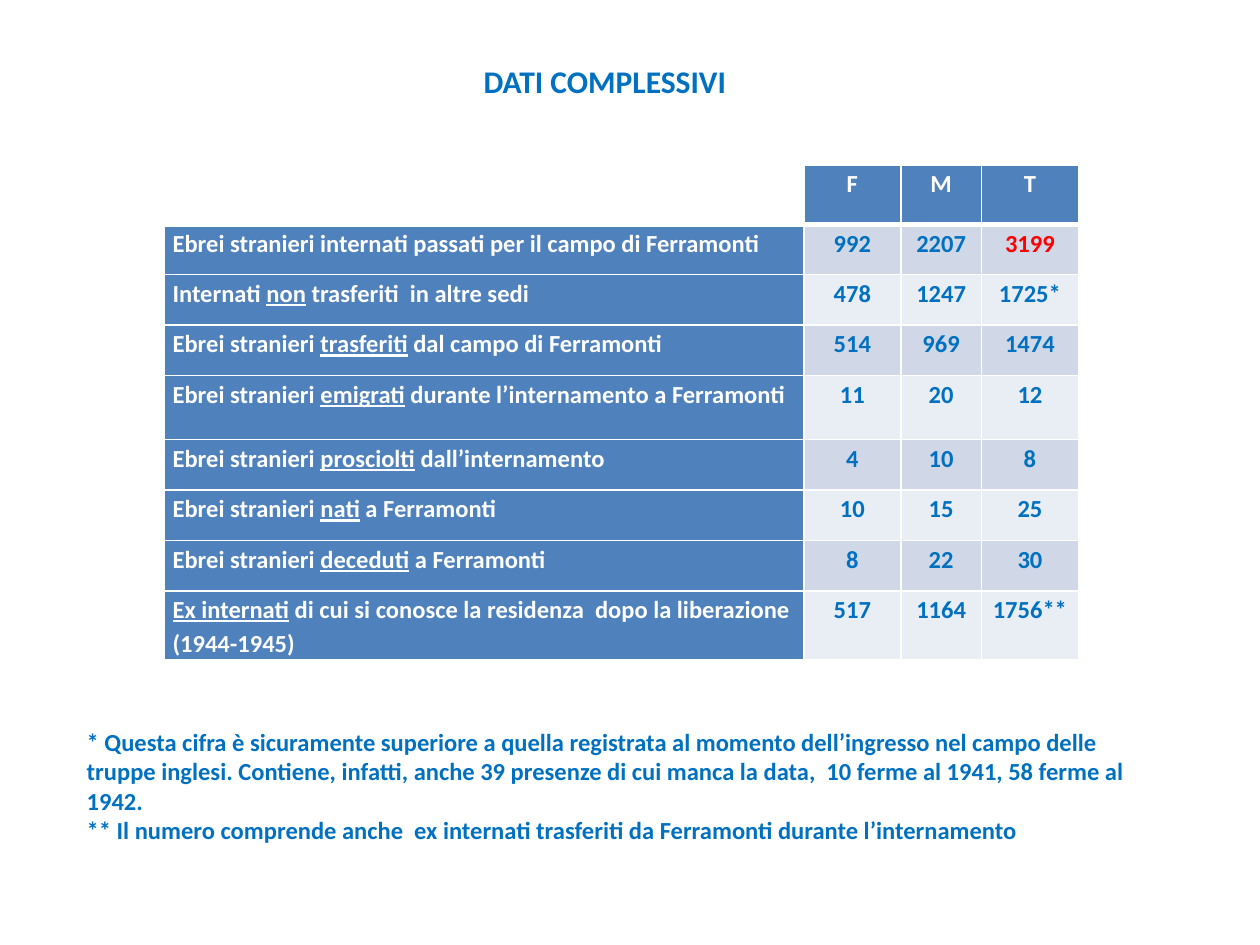
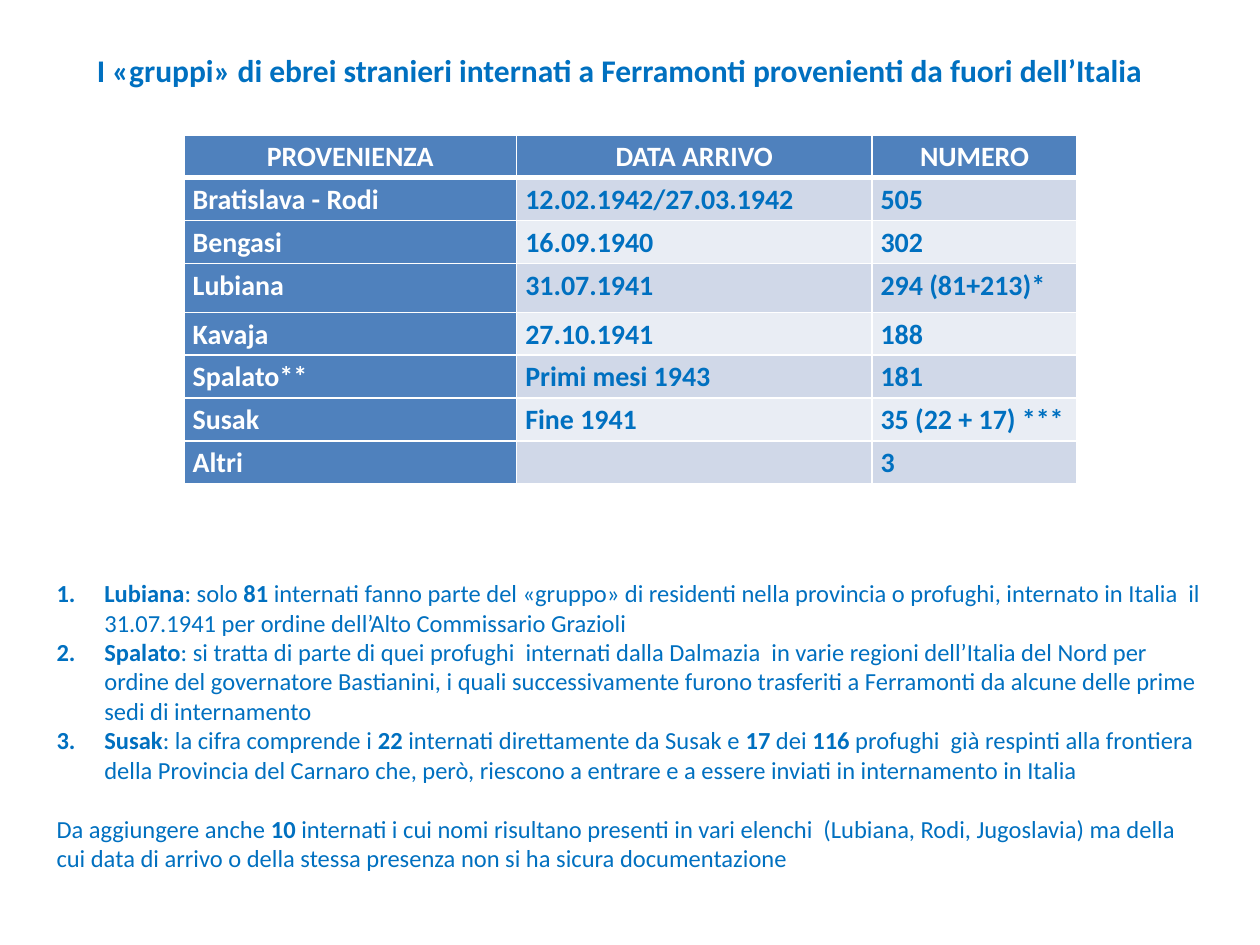
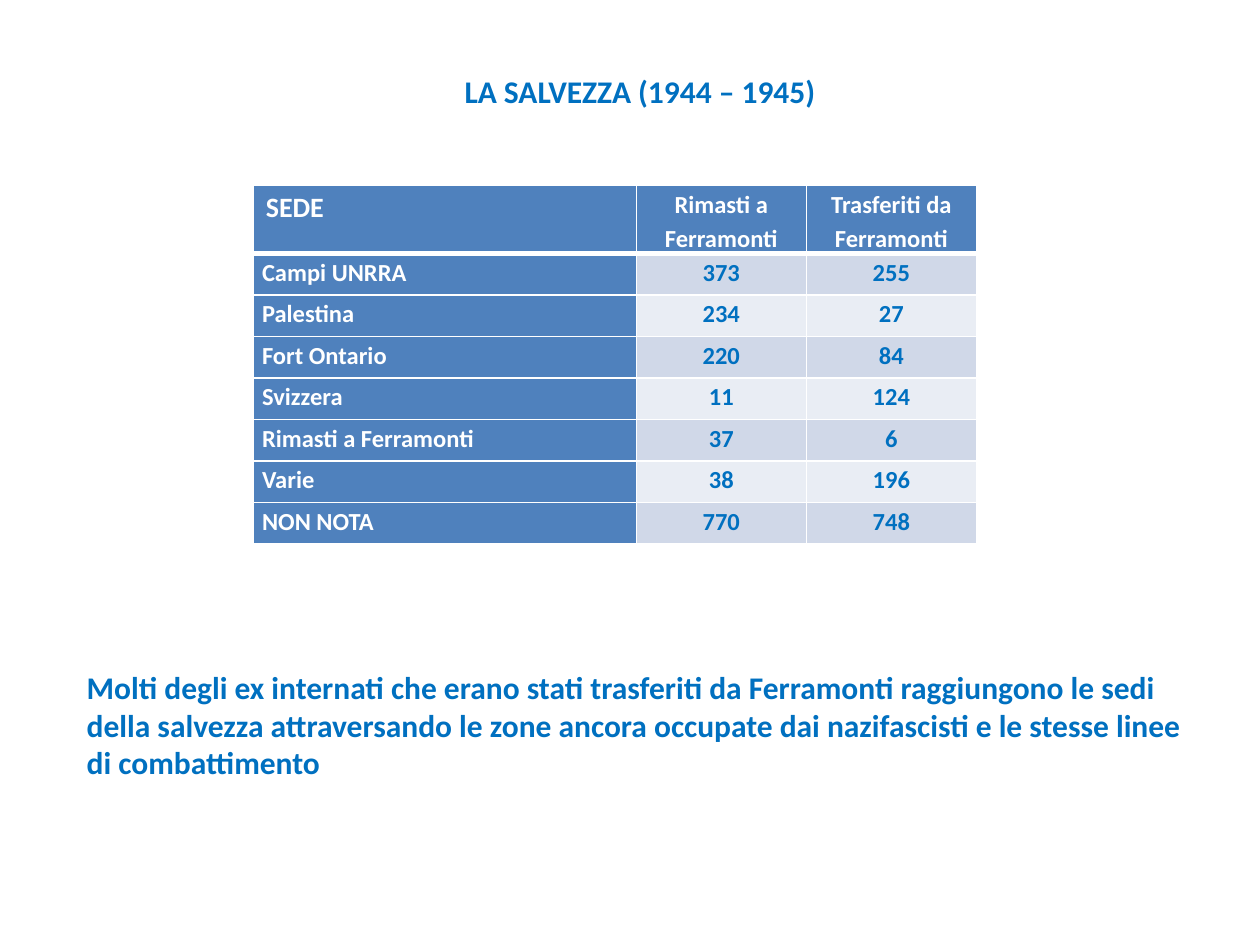
from dataclasses import dataclass

from lxml import etree
from pptx import Presentation
from pptx.dml.color import RGBColor
from pptx.enum.text import MSO_ANCHOR, PP_ALIGN
from pptx.oxml.ns import qn
from pptx.util import Inches, Pt

LEFT = PP_ALIGN.LEFT
CENTER = PP_ALIGN.CENTER
TOP = MSO_ANCHOR.TOP


@dataclass(frozen=True)
class Theme:
    font: str = "Calibri"
    text: str = "0070C0"
    alert: str = "FF0000"
    white: str = "FFFFFF"
    header: str = "4F81BD"
    bands: tuple = ("D0D8E8", "E9EDF4")
    title_size: int = 18
    table_size: int = 16
    body_size: int = 14
    cell_inset: float = 0.07
    cell_spacing: float = 1.15
    thin: int = 1
    thick: int = 3


THEME = Theme()


def write(para, text, size=THEME.body_size, color=THEME.text, bold=True,
          align=LEFT, strong=False, underline=False):
    """Segments between bars are emphasised."""
    para.alignment = align
    for index, part in enumerate(text.split("|")):
        if text and not part:
            continue
        emphasised = index % 2 == 1
        span = para.add_run()
        span.text = part
        span.font.name = THEME.font
        span.font.size = Pt(size)
        span.font.color.rgb = RGBColor.from_string(color)
        span.font.bold = bold or (strong and emphasised)
        span.font.underline = underline and emphasised


def number(para, indent):
    properties = para._p.get_or_add_pPr()
    properties.set("marL", str(Inches(indent)))
    properties.set("indent", str(-Inches(indent)))
    font = etree.SubElement(properties, qn("a:buFont"))
    font.set("typeface", "+mj-lt")
    etree.SubElement(properties, qn("a:buAutoNum")).set("type", "arabicPeriod")


def draw_border(cell, side, width):
    line = etree.SubElement(cell._tc.get_or_add_tcPr(), qn(f"a:ln{side}"))
    line.set("w", str(Pt(width)))
    fill = etree.SubElement(line, qn("a:solidFill"))
    etree.SubElement(fill, qn("a:srgbClr")).set("val", THEME.white)


class Builder:
    def __init__(self):
        self.deck = Presentation()
        self.deck.slide_width = Inches(10)
        self.deck.slide_height = Inches(7.5)
        self.page = None

    def new_page(self):
        self.page = self.deck.slides.add_slide(self.deck.slide_layouts[6])

    def text(self, left, top, width, height, lines, **style):
        box = self.page.shapes.add_textbox(
            Inches(left), Inches(top), Inches(width), Inches(height))
        frame = box.text_frame
        frame.word_wrap = True
        frame.vertical_anchor = TOP
        for index, line in enumerate(lines):
            para = frame.add_paragraph() if index else frame.paragraphs[0]
            write(para, line, **style)
        return frame.paragraphs

    def title(self, left, top, width, text, align=CENTER):
        self.text(left, top, width, 0.4, [text], size=THEME.title_size, align=align)

    def table(self, left, top, widths, heights, rows, size, value_align):
        frame = self.page.shapes.add_table(
            len(heights), len(widths), Inches(left), Inches(top),
            Inches(sum(widths)), Inches(sum(heights)))
        table = frame.table
        table.horz_banding = False
        for column, width in zip(table.columns, widths):
            column.width = Inches(width)
        for row, height in zip(table.rows, heights):
            row.height = Inches(height)
        for row_index, row in enumerate(rows):
            for column_index, text in enumerate(row):
                self.cell(table.cell(row_index, column_index), text,
                          row_index, column_index, size, value_align)
        return table

    def cell(self, cell, text, row, column, size, value_align):
        is_label = row == 0 or column == 0
        cell.margin_left = cell.margin_right = Inches(THEME.cell_inset)
        cell.margin_top = cell.margin_bottom = 0
        for side in "LRTB":
            under_header = (row, side) in ((0, "B"), (1, "T"))
            draw_border(cell, side, THEME.thick if under_header else THEME.thin)
        if row == column == 0 and not text:
            fill = THEME.white
        else:
            fill = THEME.header if is_label else THEME.bands[(row - 1) % 2]
        cell.fill.solid()
        cell.fill.fore_color.rgb = RGBColor.from_string(fill)
        para = cell.text_frame.paragraphs[0]
        para.line_spacing = THEME.cell_spacing
        if row == 0:
            align = CENTER
        else:
            align = LEFT if column == 0 else value_align
        write(para, text, size=size, align=align, underline=True,
              color=THEME.white if is_label else THEME.text)


def add_totals(builder):
    builder.new_page()
    table = builder.table(
        1.3, 1.31, [5.08, 0.77, 0.64, 0.77],
        [0.47] + [0.4] * 3 + [0.51] + [0.4] * 3 + [0.54],
        [
            ("", "F", "M", "T"),
            ("Ebrei stranieri internati passati per il campo di Ferramonti",
             "992", "2207", "3199"),
            ("Internati |non| trasferiti  in altre sedi", "478", "1247", "1725*"),
            ("Ebrei stranieri |trasferiti| dal campo di Ferramonti",
             "514", "969", "1474"),
            ("Ebrei stranieri |emigrati| durante l’internamento a Ferramonti",
             "11", "20", "12"),
            ("Ebrei stranieri |prosciolti| dall’internamento", "4", "10", "8"),
            ("Ebrei stranieri |nati| a Ferramonti", "10", "15", "25"),
            ("Ebrei stranieri |deceduti| a Ferramonti", "8", "22", "30"),
            ("|Ex internati| di cui si conosce la residenza  dopo la liberazione "
             "(1944-1945)", "517", "1164", "1756**"),
        ],
        THEME.body_size, CENTER)
    grand_total = table.cell(1, 3).text_frame.paragraphs[0].runs[0]
    grand_total.font.color.rgb = RGBColor.from_string(THEME.alert)
    builder.title(1.69, 0.44, 6.22, "DATI COMPLESSIVI")
    builder.text(0.59, 5.72, 8.66, 1.04, [
        "* Questa cifra è sicuramente superiore a quella registrata al momento "
        "dell’ingresso nel campo delle truppe inglesi. Contiene, infatti, anche 39 "
        "presenze di cui manca la data,  10 ferme al 1941, 58 ferme al 1942.",
        "** Il numero comprende anche  ex internati trasferiti da Ferramonti durante "
        "l’internamento",
    ])


def add_groups(builder):
    builder.new_page()
    builder.table(
        1.46, 1.07, [2.64, 2.82, 1.63], [0.34] * 3 + [0.39] + [0.34] * 4,
        [
            ("PROVENIENZA", "DATA ARRIVO", "NUMERO"),
            ("Bratislava - Rodi", "12.02.1942/27.03.1942", "505"),
            ("Bengasi", "16.09.1940", "302"),
            ("Lubiana", "31.07.1941", "294 (81+213)*"),
            ("Kavaja", "27.10.1941", "188"),
            ("Spalato**", "Primi mesi 1943", "181"),
            ("Susak", "Fine 1941", "35 (22 + 17) ***"),
            ("Altri", "", "3"),
        ],
        THEME.table_size, LEFT)
    builder.title(
        0.67, 0.36, 8.66,
        "I «gruppi» di ebrei stranieri internati a Ferramonti provenienti da fuori "
        "dell’Italia", align=LEFT)
    *notes, addition = builder.text(0.35, 4.54, 9.29, 2.5, [
        "|Lubiana|: solo |81| internati fanno parte del «gruppo» di residenti nella "
        "provincia o profughi, internato in Italia  il 31.07.1941 per ordine "
        "dell’Alto Commissario Grazioli",
        "|Spalato|: si tratta di parte di quei profughi  internati dalla Dalmazia  in "
        "varie regioni dell’Italia del Nord per ordine del governatore Bastianini, i "
        "quali successivamente furono trasferiti a Ferramonti da alcune delle prime "
        "sedi di internamento",
        "|Susak|: la cifra comprende i |22| internati direttamente da Susak e |17| dei "
        "|116| profughi  già respinti alla frontiera della Provincia del Carnaro che, "
        "però, riescono a entrare e a essere inviati in internamento in Italia",
        "Da aggiungere anche |10| internati i cui nomi risultano presenti in vari "
        "elenchi  (Lubiana, Rodi, Jugoslavia) ma della cui data di arrivo o della "
        "stessa presenza non si ha sicura documentazione",
    ], bold=False, strong=True)
    for note in notes:
        number(note, 0.38)
    addition.space_before = Pt(17)


def add_rescue(builder):
    builder.new_page()
    builder.title(2.64, 0.52, 4.88, "LA SALVEZZA (1944 – 1945)")
    table = builder.table(
        2.01, 1.47, [3.04, 1.35, 1.35], [0.54] + [0.33] * 7,
        [
            ("SEDE", "Rimasti a Ferramonti", "Trasferiti da Ferramonti"),
            ("Campi UNRRA", "373", "255"),
            ("Palestina", "234", "27"),
            ("Fort Ontario", "220", "84"),
            ("Svizzera", "11", "124"),
            ("Rimasti a Ferramonti", "37", "6"),
            ("Varie", "38", "196"),
            ("NON NOTA", "770", "748"),
        ],
        THEME.body_size, CENTER)
    place = table.cell(0, 0)
    place.margin_left = Inches(0.1)
    heading = place.text_frame.paragraphs[0]
    heading.alignment = LEFT
    heading.runs[0].font.size = Pt(THEME.table_size)
    builder.text(0.59, 5.25, 8.9, 1.31, [
        "Molti degli ex internati che erano stati trasferiti da Ferramonti raggiungono "
        "le sedi della salvezza attraversando le zone ancora occupate dai nazifascisti "
        "e le stesse linee di combattimento",
    ], size=THEME.title_size)


def main():
    builder = Builder()
    add_totals(builder)
    add_groups(builder)
    add_rescue(builder)
    builder.deck.save("out.pptx")


if __name__ == "__main__":
    main()
